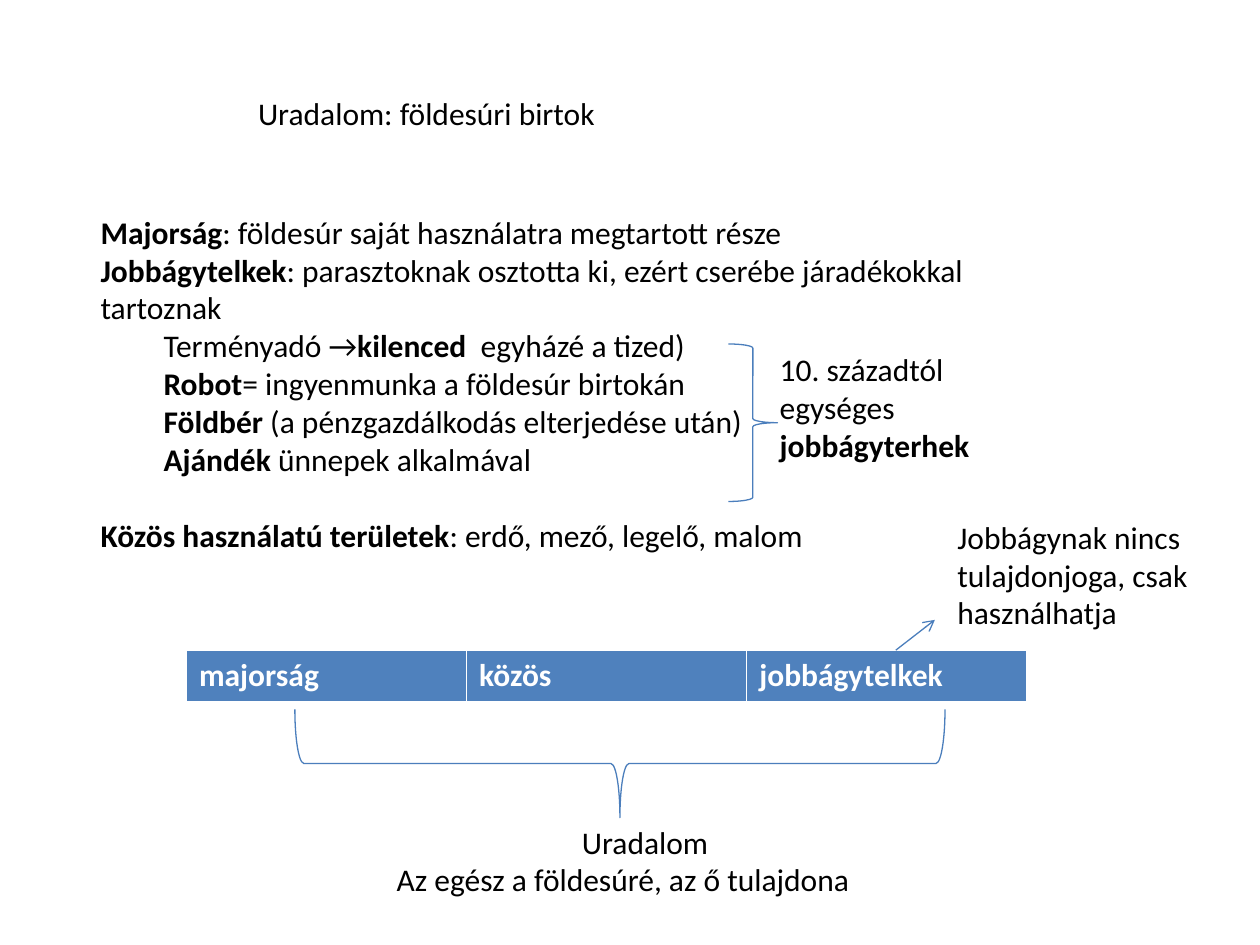
import pptx
import pptx.dml.color
import pptx.enum.shapes
import pptx.enum.text
import pptx.oxml
import pptx.oxml.ns
import pptx.util

BLACK = pptx.dml.color.RGBColor(0x00, 0x00, 0x00)
WHITE = pptx.dml.color.RGBColor(0xFF, 0xFF, 0xFF)
HEADER_BLUE = pptx.dml.color.RGBColor(0x4F, 0x81, 0xBD)
LINE_BLUE = pptx.dml.color.RGBColor(0x4B, 0x7E, 0xBC)

FONT = "Calibri"
TEXT_SIZE = pptx.util.Pt(18)
LINE_WIDTH = pptx.util.Pt(0.75)
BLANK_LINE = pptx.util.Pt(22)
SLIDE_WIDTH = pptx.util.Inches(10)
SLIDE_HEIGHT = pptx.util.Inches(7.5)
COLUMN = SLIDE_WIDTH / 100
ROW = SLIDE_HEIGHT / 75

LEFT = pptx.enum.text.PP_ALIGN.LEFT
CENTER = pptx.enum.text.PP_ALIGN.CENTER

DEFINITIONS = [
    (0, [("Majorság", True), (": földesúr saját használatra megtartott része", False)]),
    (0, [("Jobbágytelkek", True),
         (": parasztoknak osztotta ki, ezért cserébe járadékokkal tartoznak", False)]),
    (1, [("Terményadó →", False), ("kilenced", True), ("  egyházé a tized)", False)]),
    (1, [("Robot", True), ("= ingyenmunka a földesúr birtokán", False)]),
    (1, [("Földbér", True), (" (a pénzgazdálkodás elterjedése után)", False)]),
    (1, [("Ajándék", True), (" ünnepek alkalmával", False)]),
    (0, [("Közös használatú területek", True), (": erdő, mező, legelő, malom", False)]),
]
ESTATE_PARTS = ["majorság", "közös", "jobbágytelkek"]


def grid_box(origin, left, top, width, height):
    """Return a box in slide units, offset in grid columns and rows from an origin box."""
    return (round(origin[0] + left * COLUMN), round(origin[1] + top * ROW),
            round(width * COLUMN), round(height * ROW))


def add_run(paragraph, words, bold=False, color=BLACK):
    """Append one formatted run to a paragraph."""
    run = paragraph.add_run()
    run.text = words
    run.font.name = FONT
    run.font.size = TEXT_SIZE
    run.font.bold = bold
    run.font.color.rgb = color


def add_text(slide, box, lines):
    """Place lines of (level, alignment, runs) in a wrapping text box and return its paragraphs."""
    frame = slide.shapes.add_textbox(*box).text_frame
    frame.word_wrap = True
    paragraphs = []
    for level, alignment, runs in lines:
        paragraph = frame.add_paragraph() if paragraphs else frame.paragraphs[0]
        paragraph.level = level
        paragraph.alignment = alignment
        if level:
            properties = paragraph._p.get_or_add_pPr()
            properties.set("marL", str(pptx.util.Inches(0.5)))
            properties.set("indent", "0")
        for words, bold in runs:
            add_run(paragraph, words, bold)
        paragraphs.append(paragraph)
    return paragraphs


def add_brace(slide, box):
    """Place an unfilled right brace and return it."""
    brace = slide.shapes.add_shape(pptx.enum.shapes.MSO_SHAPE.RIGHT_BRACE, *box)
    brace.shadow.inherit = False
    brace.fill.background()
    brace.line.color.rgb = LINE_BLUE
    brace.line.width = LINE_WIDTH
    return brace


def add_arrow(slide, box):
    """Place an arrow rising from the lower left to the upper right of a box."""
    left, top, width, height = box
    arrow = slide.shapes.add_connector(
        pptx.enum.shapes.MSO_CONNECTOR.STRAIGHT, left, top + height, left + width, top)
    arrow.line.color.rgb = LINE_BLUE
    arrow.line.width = LINE_WIDTH
    head = pptx.oxml.parse_xml(f'<a:tailEnd {pptx.oxml.ns.nsdecls("a")} type="arrow"/>')
    arrow.line._get_or_add_ln().append(head)
    no_shadow = pptx.oxml.parse_xml(f'<a:effectLst {pptx.oxml.ns.nsdecls("a")}/>')
    arrow._element.spPr.append(no_shadow)


def add_heading(slide, box):
    """Place the topic line."""
    add_text(slide, box, [(0, LEFT, [("Uradalom: földesúri birtok", False)])])


def add_definitions(slide, box):
    """Place the estate's parts and the braced summary of the serfs' dues."""
    definitions = grid_box(box, 0, 0, 73.4, 37.4)
    lines = [(level, LEFT, runs) for level, runs in DEFINITIONS]
    add_text(slide, definitions, lines)[-1].space_before = BLANK_LINE
    add_brace(slide, grid_box(box, 50.8, 10.9, 3.9, 12.5))
    dues = [("10. századtól egységes ", False), ("jobbágyterhek", True)]
    add_text(slide, grid_box(box, 53.9, 10.9, 20.3, 10.1), [(0, LEFT, dues)])


def add_estate_bar(slide, box):
    """Place the one-row table of the estate's parts across a box."""
    table = slide.shapes.add_table(1, len(ESTATE_PARTS), *box).table
    for cell, part in zip(table.rows[0].cells, ESTATE_PARTS):
        cell.fill.solid()
        cell.fill.fore_color.rgb = HEADER_BLUE
        add_run(cell.text_frame.paragraphs[0], part, True, WHITE)


def add_estate(slide, box):
    """Place the estate bar with its owner below and the serfs' right above."""
    add_estate_bar(slide, grid_box(box, 0, 11, 66.7, 4.1))
    owner_brace = add_brace(slide, grid_box(box, 30.1, -5.8, 8.6, 51.6))
    owner_brace.rotation = 90
    owner_brace.adjustments[1] = 0.5
    add_text(slide, grid_box(box, 15.7, 24.2, 41.4, 7.1), [
        (0, CENTER, [("Uradalom", False)]),
        (0, LEFT, [("Az egész a földesúré, az ő tulajdona", False)]),
    ])
    add_arrow(slide, grid_box(box, 56.3, 8.6, 3.1, 2.4))
    right = [("Jobbágynak nincs tulajdonjoga, csak használhatja", False)]
    add_text(slide, grid_box(box, 60.2, 0, 21.9, 10.1), [(0, LEFT, right)])


def main():
    """Build and save the slide."""
    presentation = pptx.Presentation()
    presentation.slide_width = SLIDE_WIDTH
    presentation.slide_height = SLIDE_HEIGHT
    slide = presentation.slides.add_slide(presentation.slide_layouts[6])
    page = (0, 0)
    add_heading(slide, grid_box(page, 19.5, 7, 63.3, 4))
    add_definitions(slide, grid_box(page, 7, 16.4, 74.2, 37.4))
    add_estate(slide, grid_box(page, 14.8, 40.6, 82.1, 31.3))
    presentation.save("out.pptx")


if __name__ == "__main__":
    main()
